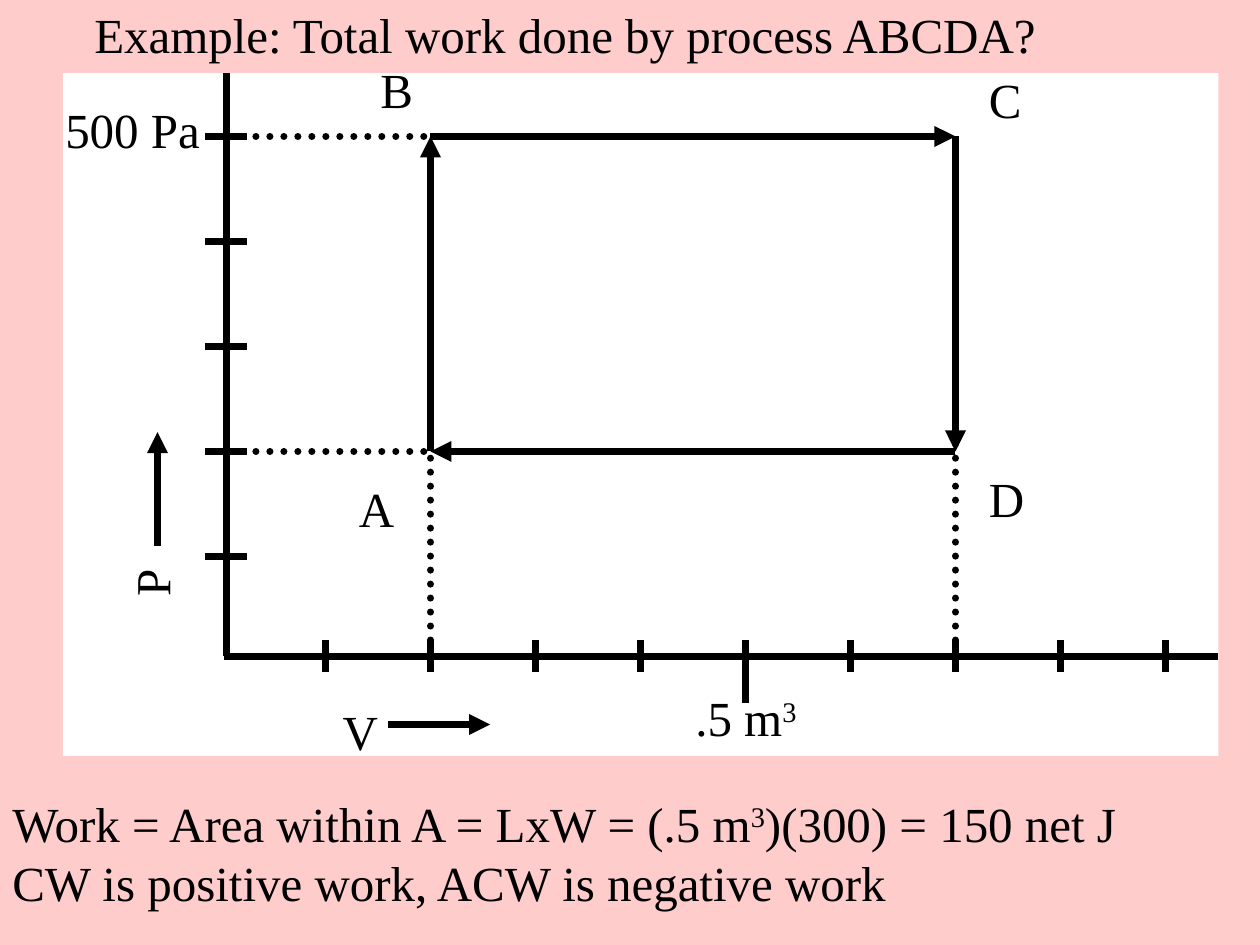
from dataclasses import dataclass

from lxml.etree import SubElement
from pptx import Presentation
from pptx.dml.color import RGBColor as RGB
from pptx.enum.dml import MSO_LINE as Dash
from pptx.enum.shapes import MSO_CONNECTOR as Conn, MSO_SHAPE as Shape
from pptx.enum.text import MSO_AUTO_SIZE as Fit
from pptx.oxml.ns import qn
from pptx.util import Inches, Pt

COLORS = {"back": "FFCCCC", "panel": "FFFFFF", "ink": "000000"}
FONT = "Times New Roman"
STEP = 5 / 6  # one axis unit


@dataclass
class Line:
    x1: float
    y1: float
    x2: float
    y2: float
    dotted: bool = False
    arrow: bool = False


@dataclass
class Label:
    text: str
    x: float
    y: float
    w: float
    h: float = 0.57
    turn: int = 0
    wrap: bool = False


def color(name: str) -> RGB:
    return RGB.from_string(COLORS[name])


def vol(unit: float) -> float:
    """Left position of a volume, in axis units."""
    return 1.75 + unit * STEP


def pres(unit: float) -> float:
    """Top position of a pressure, in axis units."""
    return 5.25 - unit * STEP


def draw_line(shapes, item: Line) -> None:
    ends = [Inches(n) for n in (item.x1, item.y1, item.x2, item.y2)]
    conn = shapes.add_connector(Conn.STRAIGHT, *ends)
    conn.line.width = Pt(4)
    conn.line.color.rgb = color("ink")
    ln = conn.line._get_or_add_ln()
    if item.dotted:
        conn.line.dash_style = Dash.ROUND_DOT
        ln.set("cap", "rnd")
    if item.arrow:
        SubElement(ln, qn("a:tailEnd"), type="triangle")
    SubElement(conn._element.spPr, qn("a:effectLst"))


def draw_label(shapes, item: Label) -> None:
    """Draw text whose parts between ^ marks are superscript."""
    place = [Inches(n) for n in (item.x, item.y, item.w, item.h)]
    box = shapes.add_textbox(*place)
    box.rotation = item.turn
    frame = box.text_frame
    frame.word_wrap = item.wrap
    frame.auto_size = Fit.SHAPE_TO_FIT_TEXT
    frame.text = item.text
    for para in frame.paragraphs:
        parts = para.text.split("^")
        para.text = parts[0]
        for part in parts[1:]:
            para.add_run().text = part
        for i, run in enumerate(para.runs):
            run.font.name = FONT
            run.font.size = Pt(28)
            run.font.color.rgb = color("ink")
            if i % 2:
                run._r.get_or_add_rPr().set("baseline", "30000")


def draw_axes(shapes) -> None:
    panel = shapes.add_shape(Shape.RECTANGLE, Inches(0.5), Inches(0.58),
                             Inches(9.17), Inches(5.42))
    panel.shadow.inherit = False
    panel.fill.solid()
    panel.fill.fore_color.rgb = color("panel")
    panel.line.fill.background()

    lines = [
        Line(1.8, 0.58, 1.8, 5.21),
        Line(1.78, 5.21, 9.67, 5.21),
        Line(3.08, 5.75, 3.89, 5.75, arrow=True),
        Line(1.25, 4.33, 1.25, 3.43, arrow=True),
    ]
    lines += [Line(1.63, pres(n), 1.96, pres(n)) for n in range(1, 6)]
    lines += [Line(vol(n), 5.08, vol(n), 5.33) for n in range(1, 10)]
    for line in lines:
        draw_line(shapes, line)

    for label in (
        Label("V", 2.62, 5.52, 0.48),
        Label("P", 0.99, 4.34, 0.42, turn=270),
        Label("500 Pa", 0.42, 0.74, 1.27),
        Label(".5 m^3", 5.42, 5.41, 1.02),
    ):
        draw_label(shapes, label)


def draw_cycle(shapes) -> None:
    left, right, low, high = vol(2), vol(7), pres(2), pres(5)
    for line in (
        Line(left, 5.08, left, low, dotted=True),
        Line(1.92, low, left, low, dotted=True),
        Line(1.92, high, left, high, dotted=True),
        Line(right, 5.08, right, pres(4), dotted=True),
        Line(vol(5), 5.08, vol(5), 5.58),
    ):
        draw_line(shapes, line)

    spots = [(left, low), (left, high), (right, high), (right, low)]
    for start, end in zip(spots, spots[1:] + spots[:1]):
        draw_line(shapes, Line(*start, *end, arrow=True))

    for label in (
        Label("A", 2.75, 3.75, 0.48),
        Label("B", 2.92, 0.42, 0.46),
        Label("C", 7.75, 0.5, 0.46),
        Label("D", 7.75, 3.67, 0.48),
    ):
        draw_label(shapes, label)


def main() -> None:
    deck = Presentation()
    deck.slide_width, deck.slide_height = Inches(10), Inches(7.5)
    slide = deck.slides.add_slide(deck.slide_layouts[6])
    slide.background.fill.solid()
    slide.background.fill.fore_color.rgb = color("back")
    shapes = slide.shapes

    draw_axes(shapes.add_group_shape().shapes)
    title = "Example: Total work done by process ABCDA?"
    draw_label(shapes, Label(title, 0.65, -0.01, 7.73))
    draw_cycle(shapes)
    work = ("Work = Area within A = LxW = (.5 m^3^)(300) = 150 net J\n"
            "CW is positive work, ACW is negative work")
    draw_label(shapes, Label(work, 0, 6.25, 10, 1.03, wrap=True))
    deck.save("out.pptx")


if __name__ == "__main__":
    main()
